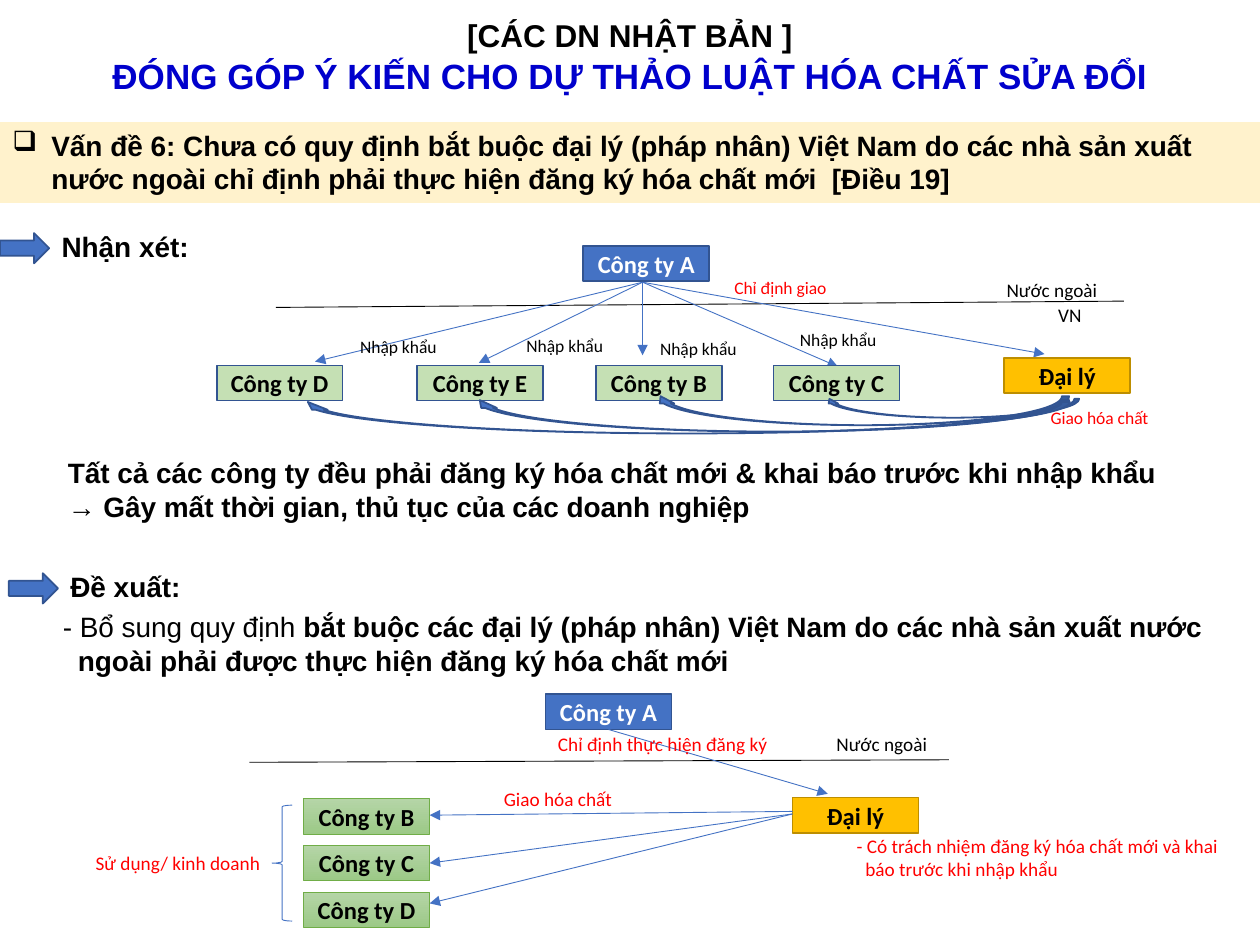
import pptx
import pptx.util
import pptx.dml.color
import pptx.enum.shapes
import pptx.enum.text
import pptx.oxml
import pptx.oxml.ns

SHAPE = pptx.enum.shapes.MSO_SHAPE
ALIGN = pptx.enum.text.PP_ALIGN
ANCHOR = pptx.enum.text.MSO_ANCHOR

# The slide is a grid of 100 columns by 75 rows of square cells.
CELL = pptx.util.Inches(0.1)
COLUMNS, ROWS = 100, 75
NODE_W, NODE_H = 10, 2.8
COLORS = {
    "black": "000000", "white": "FFFFFF", "red": "FF0000", "title": "0000CC",
    "band": "FFF2CC", "blue": "4472C4", "navy": "325491", "green": "C5E0B4",
    "amber": "FFC000", "amber_edge": "BD8E00", "leaf_top": "B5D5A7",
    "leaf_bottom": "9CC987", "leaf_edge": "70AD47",
}


def cells(*counts):
    return [round(count * CELL) for count in counts]


def rgb(name):
    return pptx.dml.color.RGBColor.from_string(COLORS[name])


def add_run(paragraph, text, size, color="black", font="Arial", bold=False):
    run = paragraph.add_run()
    run.text = text
    run.font.size = pptx.util.Pt(size)
    run.font.name = font
    run.font.bold = bold
    run.font.color.rgb = rgb(color)


def hang(paragraph, indent, bullet=None):
    """Give a paragraph a hanging indent in cells and an optional bullet."""
    properties = paragraph._p.get_or_add_pPr()
    width = cells(indent)[0]
    properties.set("marL", str(width))
    properties.set("indent", str(-width))
    if bullet:
        mark = pptx.oxml.parse_xml(f'<a:buChar {pptx.oxml.ns.nsdecls("a")}/>')
        mark.set("char", bullet)
        properties.append(mark)


def add_text(slide, place, wrap=False):
    frame = slide.shapes.add_textbox(*cells(*place)).text_frame
    frame.word_wrap = wrap
    return frame


def add_label(slide, text, place, size=11, color="black"):
    paragraph = add_text(slide, place).paragraphs[0]
    add_run(paragraph, text, size, color, "Calibri")


def add_figure(slide, kind, place, fill=None, edge=None, width=1):
    figure = slide.shapes.add_shape(kind, *cells(*place))
    figure.shadow.inherit = False
    if fill:
        figure.fill.solid()
        figure.fill.fore_color.rgb = rgb(fill)
    else:
        figure.fill.background()
    if edge:
        figure.line.color.rgb = rgb(edge)
        figure.line.width = pptx.util.Pt(width)
    else:
        figure.line.fill.background()
    return figure


def add_node(slide, name, left, top, fill, edge="navy", color="black", width=1):
    node = add_figure(slide, SHAPE.RECTANGLE, (left, top, NODE_W, NODE_H),
                      fill, edge, width)
    frame = node.text_frame
    frame.vertical_anchor = ANCHOR.MIDDLE
    frame.paragraphs[0].alignment = ALIGN.CENTER
    add_run(frame.paragraphs[0], name, 14, color, "Calibri", True)
    return node


def add_leaf_node(slide, name, left, top):
    """Add a company box with a vertical green gradient."""
    node = add_node(slide, name, left, top, "green", "leaf_edge", width=0.5)
    node.fill.gradient()
    node.fill.gradient_angle = 270
    for stop, color in zip(node.fill.gradient_stops, ("leaf_top", "leaf_bottom")):
        stop.color.rgb = rgb(color)


def add_line(slide, start, end, color="blue", arrow=True):
    line = slide.shapes.add_connector(
        pptx.enum.shapes.MSO_CONNECTOR.STRAIGHT, *cells(*start, *end))
    line.line.color.rgb = rgb(color)
    line.line.width = pptx.util.Pt(0.5)
    namespace = pptx.oxml.ns.nsdecls("a")
    if arrow:
        line.line._get_or_add_ln().append(
            pptx.oxml.parse_xml(f'<a:tailEnd {namespace} type="triangle"/>'))
    line._element.spPr.append(pptx.oxml.parse_xml(f"<a:effectLst {namespace}/>"))


def add_heading(slide, text, left, top, width):
    """Add a block arrow followed by a section heading."""
    add_figure(slide, SHAPE.RIGHT_ARROW, (left, top + 0.8, 3.9, 2.4), "blue", "navy")
    frame = add_text(slide, (left + 3.9, top, width, 3.7))
    add_run(frame.paragraphs[0], text, 16, bold=True)


def add_title(slide):
    title = slide.shapes.title
    title.left, title.top, title.width, title.height = cells(7.6, 0.8, 84.8, 7.4)
    frame = title.text_frame
    frame.word_wrap = False
    frame.auto_size = pptx.enum.text.MSO_AUTO_SIZE.NONE
    frame.vertical_anchor = ANCHOR.TOP
    first, second = frame.paragraphs[0], frame.add_paragraph()
    first.alignment = second.alignment = ALIGN.CENTER
    add_run(first, "[CÁC DN NHẬT BẢN ]", 18, bold=True)
    add_run(second, "ĐÓNG GÓP Ý KIẾN CHO DỰ THẢO LUẬT HÓA CHẤT SỬA ĐỔI",
            20, "title", bold=True)


def add_issue(slide):
    band = add_figure(slide, SHAPE.RECTANGLE, (0, 9.7, COLUMNS, 6.4), "band")
    band.text_frame.vertical_anchor = ANCHOR.TOP
    issue = band.text_frame.paragraphs[0]
    issue.alignment = ALIGN.LEFT
    hang(issue, 3.1, "❑")
    add_run(issue, "Vấn đề 6: Chưa có quy định bắt buộc đại lý (pháp nhân) Việt Nam "
            "do các nhà sản xuất nước ngoài chỉ định phải thực hiện đăng ký "
            "hóa chất mới  [Điều 19]", 16, bold=True)


def add_current_flow(slide):
    add_heading(slide, "Nhận xét:", 0, 17.7, 12.2)
    add_line(slide, (21.9, 24.4), (89.2, 23.9), "black", arrow=False)
    add_label(slide, "Nước ngoài", (78.9, 21.6, 9.6, 2.9))
    add_label(slide, "VN", (83, 23.6, 3.9, 2.9))
    add_node(slide, "Công ty A", 46.3, 19.5, "blue", color="white")

    importers = [  # name, box left, arrow tip, import label position
        ("Công ty C", 61.4, (66.5, 29.1), (62.5, 25.6)),
        ("Công ty B", 47.3, (51, 28.2), (51.4, 26.3)),
        ("Công ty E", 33.1, (38, 28.8), (40.8, 26.1)),
        ("Công ty D", 17.2, (25, 28.7), (27.6, 26.2)),
    ]
    source = (51, 22.4)
    for name, left, tip, label in importers:
        add_line(slide, source, tip)
        add_node(slide, name, left, 29, "green")
        add_label(slide, "Nhập khẩu", (*label, 8.2, 2.7), 10)
    add_line(slide, source, (82.9, 28.1))
    add_node(slide, "Đại lý", 79.7, 28.4, "amber", "amber_edge")
    add_label(slide, "Chỉ định giao", (57.3, 21.5, 9.4, 2.7), 10, "red")

    deliveries = [  # left, top, thickness and length before the quarter turn
        (74.8, 22.3, 1.5, 20.2), (67.2, 16.1, 2.3, 33),
        (59.9, 9.3, 2.5, 47.4), (53.1, 2.6, 2.5, 61.1),
    ]
    for place in deliveries:
        add_figure(slide, SHAPE.CURVED_LEFT_ARROW, place, "blue", "navy").rotation = 90
    add_label(slide, "Giao hóa chất", (82.4, 31.8, 9.9, 2.7), 10, "red")

    remark = add_text(slide, (4.4, 35.7, 89.6, 6.4))
    add_run(remark.paragraphs[0], "Tất cả các công ty đều phải đăng ký hóa chất mới "
            "& khai báo trước khi nhập khẩu", 16, bold=True)
    add_run(remark.add_paragraph(),
            "→ Gây mất thời gian, thủ tục của các doanh nghiệp", 16, bold=True)


def add_proposed_flow(slide):
    add_heading(slide, "Đề xuất:", 0.7, 44.7, 10.9)
    proposal = add_text(slide, (4, 47.9, 96.1, 6.4), wrap=True).paragraphs[0]
    hang(proposal, 1.2)
    add_run(proposal, "- Bổ sung quy định ", 16)
    add_run(proposal, "bắt buộc các đại lý (pháp nhân) Việt Nam do các nhà sản xuất "
            "nước ngoài phải được thực hiện đăng ký hóa chất mới", 16, bold=True)

    add_line(slide, (19.8, 60.5), (75.3, 60.3), "black", arrow=False)
    add_label(slide, "Nước ngoài", (65.4, 57.6, 9.6, 2.9))
    add_node(slide, "Công ty A", 43.3, 55.1, "blue", color="white")
    add_line(slide, (48.3, 57.9), (65.7, 63))
    add_node(slide, "Đại lý", 62.9, 63.3, "amber", "amber_edge")
    add_label(slide, "Chỉ định thực hiện đăng ký", (43.3, 57.6, 18.7, 2.9), color="red")

    users = [("Công ty B", 64.4, 64.7), ("Công ty C", 64.6, 68.5),
             ("Công ty D", 64.6, 71.7)]
    for row, (name, start, end) in enumerate(users):
        add_leaf_node(slide, name, 24.1, 63.4 + 3.7 * row)
        add_line(slide, (62.9, start), (34.1, end))
    add_figure(slide, SHAPE.LEFT_BRACE, (21.6, 63.9, 1.6, 9.2), edge="blue", width=0.5)
    add_label(slide, "Sử dụng/ kinh doanh", (6.6, 67.1, 15.1, 2.9), color="red")
    add_label(slide, "Giao hóa chất", (39, 62, 10.6, 2.9), color="red")

    duty = add_text(slide, (67, 65.7, 33, 4.7), wrap=True).paragraphs[0]
    hang(duty, 0.7)
    add_run(duty, "- Có trách nhiệm đăng ký hóa chất mới và khai báo trước khi nhập khẩu",
            11, "red", "Calibri")


def main():
    deck = pptx.Presentation()
    deck.slide_width, deck.slide_height = cells(COLUMNS, ROWS)
    slide = deck.slides.add_slide(deck.slide_layouts[5])
    add_title(slide)
    add_issue(slide)
    add_current_flow(slide)
    add_proposed_flow(slide)
    deck.save("out.pptx")


if __name__ == "__main__":
    main()
